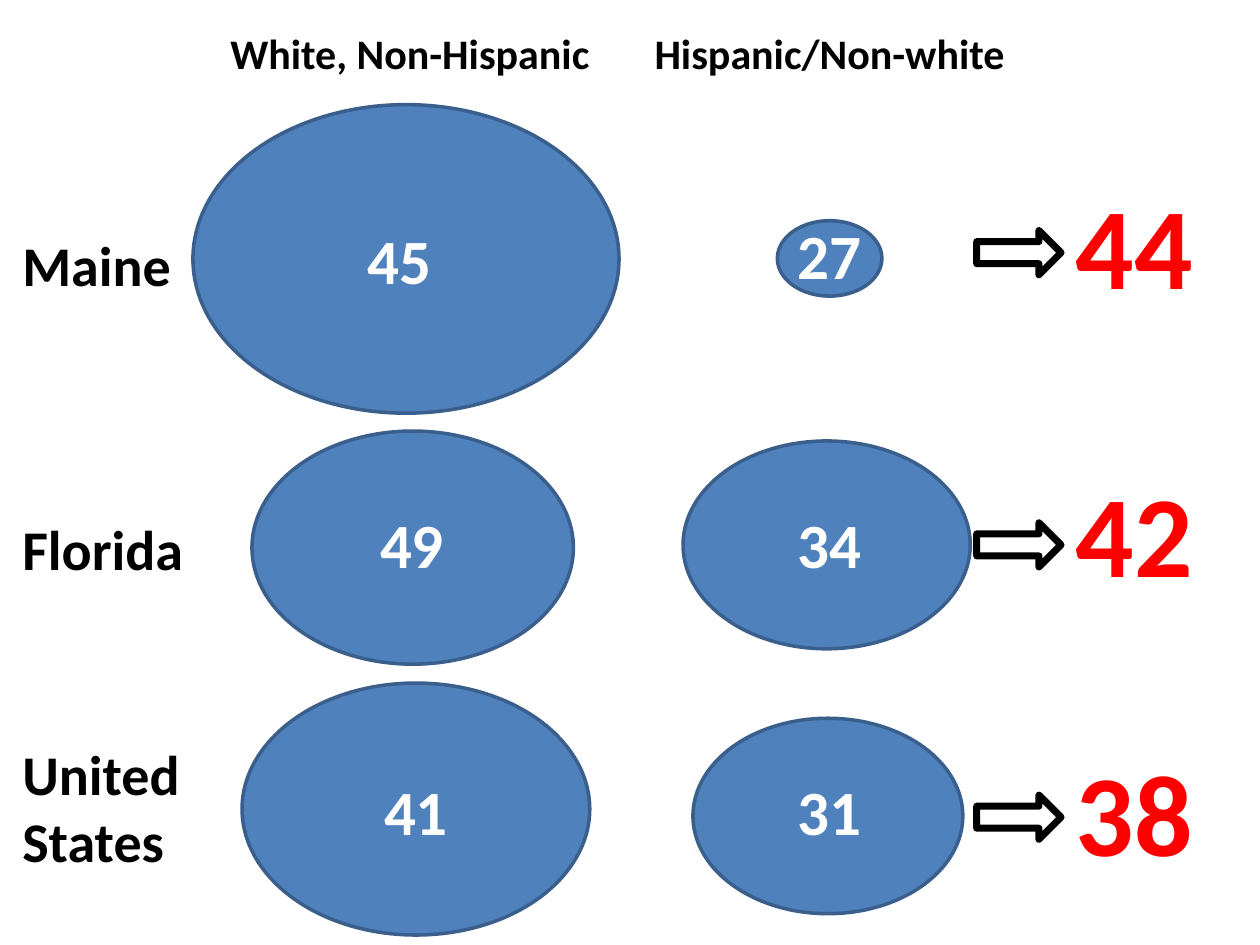
from collections import namedtuple

from pptx import Presentation
from pptx.dml.color import RGBColor
from pptx.enum.shapes import MSO_SHAPE as Shape
from pptx.enum.text import MSO_AUTO_SIZE as AutoSize, PP_ALIGN as Align
from pptx.util import Cm, Pt

BLACK = RGBColor(0x00, 0x00, 0x00)
WHITE = RGBColor(0xFF, 0xFF, 0xFF)
RED = RGBColor(0xFF, 0x00, 0x00)
BLUE = RGBColor(0x4F, 0x81, 0xBD)
DARK_BLUE = RGBColor(0x3A, 0x5F, 0x8C)

LABEL = {"size": Pt(32), "name": "Calibri", "bold": True}
HEADING = {**LABEL, "size": Pt(24)}
VALUE = {**LABEL, "size": Pt(36)}
TOTAL = {**LABEL, "size": Pt(66)}

HEADINGS = [("White, Non-Hispanic", 4.24), ("Hispanic/Non-white", 12.7)]
HEADING_TOP, HEADING_SIZE = 0.43, (8.05, 1.27)
LABEL_LEFT, TOTAL_LEFT, ARROW_LEFT = 0.2, 20.96, 19.69
VALUE_SIZE, TOTAL_SIZE, ARROW_SIZE = (3.81, 1.8), (3.81, 3.07), (1.7, 0.89)

# Boxes are (left, top, width, height) in cm.
Group = namedtuple("Group", "value value_at oval")
Region = namedtuple("Region", "name label_box groups total total_top arrow_top")

REGIONS = [
    Region("Maine", (LABEL_LEFT, 4.52, 4.01, 1.63),
           [Group("45", (6.15, 4.34), (3.89, 2.11, 8.59, 6.22)),
            Group("27", (14.81, 4.24), (15.67, 4.45, 2.11, 1.52))],
           "44", 3.38, 4.65),
    Region("Florida", (LABEL_LEFT, 10.24, 5.28, 1.63),
           [Group("49", (6.4, 10.06), (5.08, 8.69, 6.48, 4.7)),
            Group("34", (14.81, 10.06), (13.77, 8.89, 5.79, 4.19))],
           "42", 9.19, 10.54),
    Region("United States", (LABEL_LEFT, 14.78, 5.28, 3),
           [Group("41", (6.48, 15.44), (4.88, 13.77, 7.01, 5.08)),
            Group("31", (14.81, 15.44), (13.97, 14.48, 5.44, 3.94))],
           "38", 14.81, 16.03),
]


def add_text(s, text, box, font, color=BLACK, align=Align.CENTER):
    tf = s.shapes.add_textbox(*map(Cm, box)).text_frame
    tf.word_wrap = True
    tf.auto_size = AutoSize.SHAPE_TO_FIT_TEXT
    p = tf.paragraphs[0]
    p.alignment = align
    r = p.add_run()
    r.text = text
    for key, value in font.items():
        setattr(r.font, key, value)
    r.font.color.rgb = color


def add_outlined(s, kind, box, line, width):
    """Add an unfilled preset shape with a plain outline."""
    sp = s.shapes.add_shape(kind, *map(Cm, box))
    sp.shadow.inherit = False
    sp.fill.background()
    sp.line.color.rgb = line
    sp.line.width = Pt(width)
    return sp


def add_group(s, group):
    """Add the oval sized by population share, and its value on top."""
    oval = add_outlined(s, Shape.OVAL, group.oval, DARK_BLUE, 2)
    oval.fill.solid()
    oval.fill.fore_color.rgb = BLUE
    add_text(s, group.value, group.value_at + VALUE_SIZE, VALUE, WHITE)


def add_region(s, region):
    add_text(s, region.name, region.label_box, LABEL, align=Align.LEFT)
    for group in region.groups:
        add_group(s, group)
    add_text(s, region.total, (TOTAL_LEFT, region.total_top) + TOTAL_SIZE, TOTAL, RED)
    add_outlined(s, Shape.RIGHT_ARROW, (ARROW_LEFT, region.arrow_top) + ARROW_SIZE,
                 BLACK, 4)


def main():
    prs = Presentation()
    prs.slide_width, prs.slide_height = Cm(25.4), Cm(19.05)
    s = prs.slides.add_slide(prs.slide_layouts[6])
    for text, left in HEADINGS:
        add_text(s, text, (left, HEADING_TOP) + HEADING_SIZE, HEADING)
    for region in REGIONS:
        add_region(s, region)
    prs.save("out.pptx")


if __name__ == "__main__":
    main()
